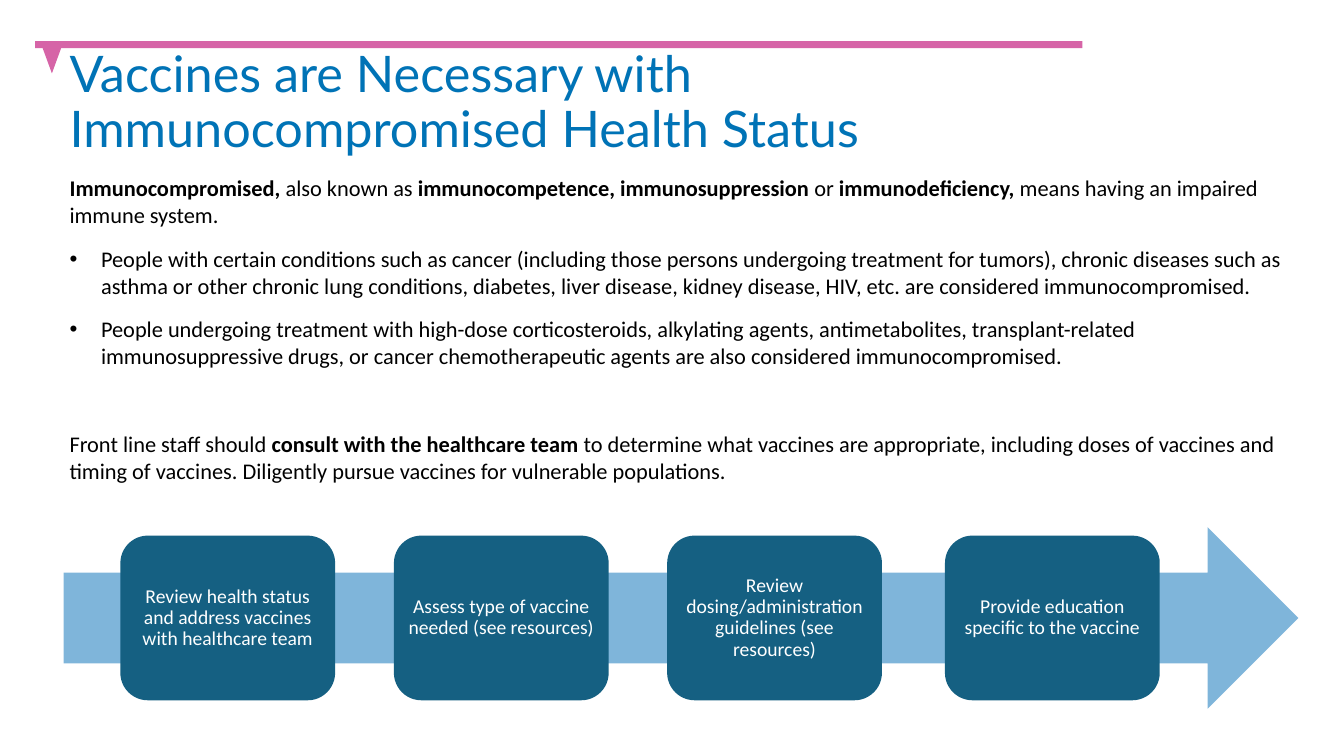
from pptx import Presentation
from pptx.dml.color import RGBColor
from pptx.enum.shapes import MSO_SHAPE as Preset
from pptx.enum.text import MSO_ANCHOR as Anchor, MSO_AUTO_SIZE as AutoSize, PP_ALIGN as Align
from pptx.oxml.ns import qn
from pptx.util import Pt
from lxml.etree import SubElement

PINK, TITLE_BLUE, ARROW_BLUE, STEP_TEAL = "D664A7", "0073B6", "006DB7", "156082"
BLACK, WHITE = "000000", "FFFFFF"

TITLE = "Vaccines are Necessary with Immunocompromised Health Status"

# Each paragraph: text with ** around bold words, bulleted or not, space before
BODY = [
    ("**Immunocompromised, **also known as **immunocompetence, immunosuppression "
     "**or** immunodeficiency, **means having an impaired immune system.", False, 0),
    ("People with certain conditions such as cancer (including those persons undergoing "
     "treatment for tumors), chronic diseases such as asthma or other chronic lung "
     "conditions, diabetes, liver disease, kidney disease, HIV, etc. are considered "
     "immunocompromised.", True, 6),
    ("People undergoing treatment with high-dose corticosteroids, alkylating agents, "
     "antimetabolites, transplant-related immunosuppressive drugs, or cancer "
     "chemotherapeutic agents are also considered immunocompromised.", True, 6),
    ("Front line staff should **consult with the healthcare team **to determine what "
     "vaccines are appropriate, including doses of vaccines and timing of vaccines. "
     "Diligently pursue vaccines for vulnerable populations.", False, 37.5),
]

# Each step: offset from the arrow's left end, text
STEPS = [
    (40.6, "Review health status and address vaccines with healthcare team"),
    (236, "Assess type of vaccine needed (see resources)"),
    (431.2, "Review dosing/administration guidelines (see resources)"),
    (629.6, "Provide education specific to the vaccine"),
]


def paint(color_format, color):
    color_format.rgb = RGBColor.from_string(color)


def write(paragraph, text, size=16, font="Calibri", color=BLACK, align=Align.LEFT,
          line_spacing=1.0, before=0, after=0):
    paragraph.alignment = align
    paragraph.line_spacing = line_spacing
    paragraph.space_before, paragraph.space_after = Pt(before), Pt(after)
    for index, part in enumerate(text.split("**")):
        if part:
            run = paragraph.add_run()
            run.text = part
            run.font.size, run.font.name = Pt(size), font
            run.font.bold = index % 2 == 1
            paint(run.font.color, color)


def set_bullet(paragraph, bulleted, indent=22.5):
    properties = paragraph._p.get_or_add_pPr()
    properties.set("marL", str(Pt(indent if bulleted else 0)))
    properties.set("indent", str(Pt(-indent if bulleted else 0)))
    if bulleted:
        SubElement(properties, qn("a:buFont")).set("typeface", "Arial")
        SubElement(properties, qn("a:buChar")).set("char", "•")
    else:
        SubElement(properties, qn("a:buNone"))


def add_block(slide, preset, left, top, width, height, color):
    block = slide.shapes.add_shape(preset, Pt(left), Pt(top), Pt(width), Pt(height))
    block.shadow.inherit = False
    block.fill.solid()
    paint(block.fill.fore_color, color)
    block.line.fill.background()
    return block


def place(placeholder, left, top, width, height):
    placeholder.left, placeholder.top = Pt(left), Pt(top)
    placeholder.width, placeholder.height = Pt(width), Pt(height)
    frame = placeholder.text_frame
    frame.word_wrap = True
    frame.auto_size = AutoSize.NONE
    frame.vertical_anchor = Anchor.TOP
    return frame


def add_header_mark(slide, left, top, width):
    add_block(slide, Preset.RECTANGLE, left, top, width, 5, PINK)
    pointer = add_block(slide, Preset.ISOSCELES_TRIANGLE, left + 5, top + 4.3, 13.7, 18.7, PINK)
    pointer.rotation = 180


def fill_title(slide, left, top, width, height):
    frame = place(slide.shapes.title, left, top, width, height)
    write(frame.paragraphs[0], TITLE, size=36, font="Lato", color=TITLE_BLUE, line_spacing=0.9)


def fill_body(slide, left, top, width, height):
    frame = place(slide.placeholders[1], left, top, width, height)
    for index, (text, bulleted, before) in enumerate(BODY):
        paragraph = frame.add_paragraph() if index else frame.paragraphs[0]
        set_bullet(paragraph, bulleted)
        write(paragraph, text, before=before, after=6)


def add_process(slide, left, top, width, height):
    # Half-transparent arrow behind the steps
    arrow = add_block(slide, Preset.RIGHT_ARROW, left, top, width, height, ARROW_BLUE)
    tint = arrow._element.spPr.find(qn("a:solidFill"))[0]
    SubElement(tint, qn("a:alpha")).set("val", "50000")

    # Steps, centred on the arrow's height
    step_width, step_height = 153.4, 117.6
    step_top = top + (height - step_height) / 2
    for offset, text in STEPS:
        step = add_block(slide, Preset.ROUNDED_RECTANGLE, left + offset, step_top,
                         step_width, step_height, STEP_TEAL)
        frame = step.text_frame
        frame.word_wrap = True
        frame.vertical_anchor = Anchor.MIDDLE
        frame.margin_left = frame.margin_right = Pt(4)
        frame.margin_top = frame.margin_bottom = Pt(4)
        write(frame.paragraphs[0], text, size=14, color=WHITE, align=Align.CENTER,
              line_spacing=0.9)


def main():
    deck = Presentation()
    deck.slide_width, deck.slide_height = Pt(960), Pt(540)
    slide = deck.slides.add_slide(deck.slide_layouts[1])
    add_header_mark(slide, 25.2, 29.4, 748)
    fill_title(slide, 42.5, 31.7, 802.8, 74.2)
    fill_body(slide, 42.5, 121, 882, 255.6)
    add_process(slide, 45.4, 376.6, 882, 129.6)
    deck.save("out.pptx")


if __name__ == "__main__":
    main()
